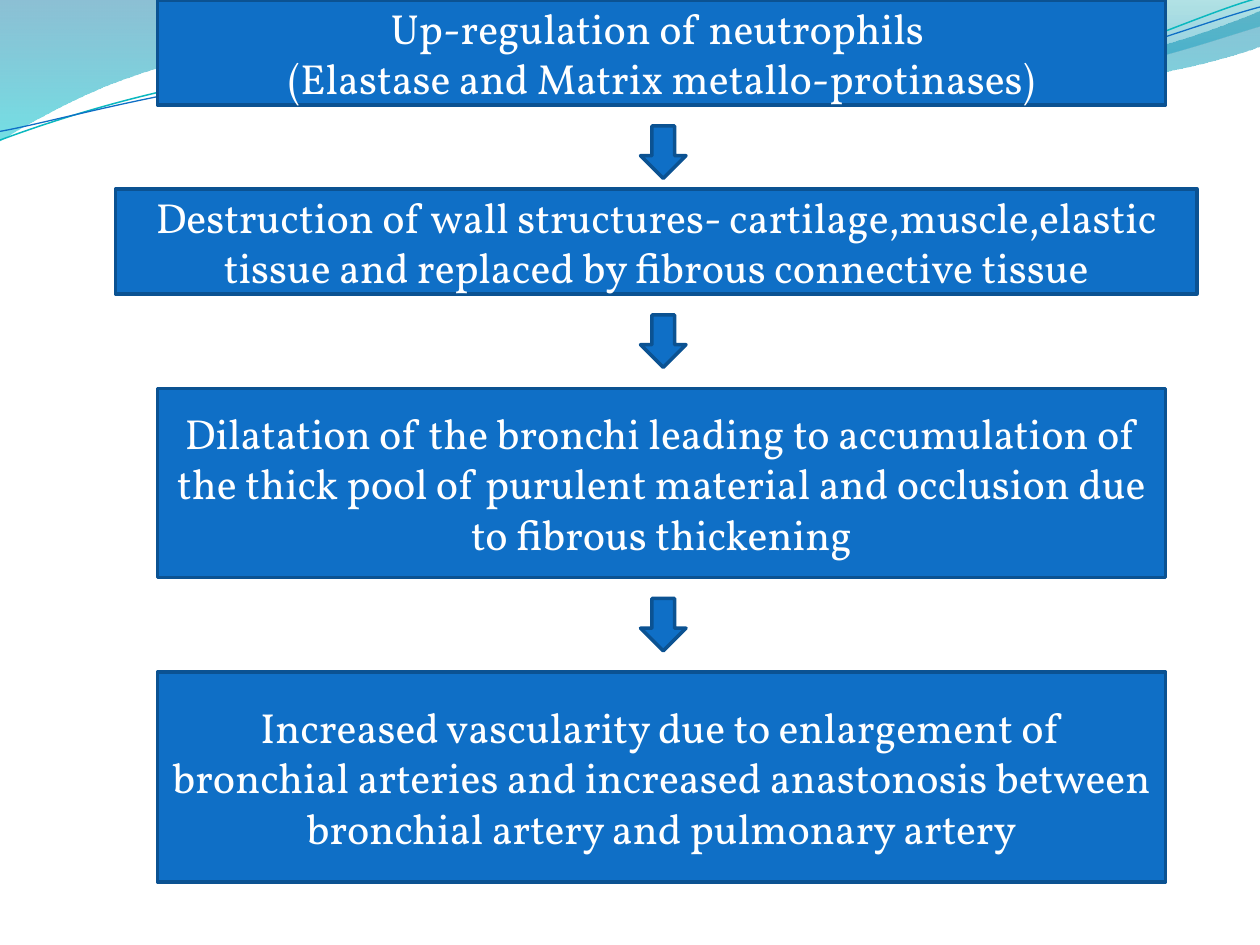
from lxml.etree import SubElement
from pptx import Presentation
from pptx.dml.color import RGBColor
from pptx.enum.shapes import MSO_SHAPE
from pptx.enum.text import MSO_ANCHOR, PP_ALIGN
from pptx.oxml.ns import qn
from pptx.util import Pt

BLUE = RGBColor(0x0F, 0x6F, 0xC6)
DARK_BLUE = RGBColor(0x0B, 0x52, 0x92)
WHITE = RGBColor(0xFF, 0xFF, 0xFF)
OCEAN = RGBColor(0x00, 0x74, 0xA1)
AQUA = RGBColor(0x00, 0xC6, 0xCF)
TEAL = RGBColor(0x00, 0xA1, 0xA9)
SKY = RGBColor(0x00, 0x8B, 0xBF)
TURQUOISE = RGBColor(0x0A, 0xB8, 0xBF)

FONT = "Vollkorn"
STRAND_ROTATION = 357.3
ARROW_LEFT, ARROW_WIDTH, ARROW_HEIGHT, ARROW_GAP = 366, 26, 30, 12

# Each part after the start lists one point for a line, three for a Bezier curve.
WIDE_WAVE = [
    [(0, 0)],
    [(317, -1)],
    [(343, 12), (478, 45), (546, 45)],
    [(614, 45), (690, 19), (720, 6)],
    [(721, 26)],
    [(708, 32), (626, 55), (537, 54)],
    [(448, 54), (275, 20), (185, 24)],
    [(93, 26), (33, 60), (-1, 81)],
    [(0, 0)],
]
RIGHT_WAVE = [
    [(345, -1)],
    [(367, 8), (491, 45), (554, 47)],
    [(620, 50), (692, 23), (720, 15)],
    [(720, 0)],
    [(345, -1)],
]
UPPER_STRAND = [
    [(-1.4, 63.1)],
    [(34.2, 51.7), (114.3, 29.4), (199.4, 29.4)],
    [(284.4, 30.5), (425.8, 67.2), (512, 65.2)],
    [(599.2, 62.3), (676, 25.9), (720.6, 15.9)],
]
LOWER_STRAND = [
    [(-1.1, 58.1)],
    [(33.2, 53.7), (118.2, 32.6), (204.3, 32.7)],
    [(290.3, 33.7), (429.1, 63.3), (515.3, 61.4)],
    [(601.5, 59.4), (679, 30), (721.4, 21)],
]

# Left, top, width, height and paragraphs of each step
STEPS = [
    (90, 0, 576, 60, ["Up-regulation of neutrophils ",
                      "(Elastase and Matrix metallo-protinases)"]),
    (66, 108, 618, 60, ["Destruction of wall structures- cartilage,muscle,elastic "
                        "tissue and replaced by fibrous connective tissue"]),
    (90, 222, 576, 108, ["Dilatation of the bronchi leading to accumulation of the "
                         "thick pool of purulent material and occlusion due to "
                         "fibrous thickening"]),
    (90, 384, 576, 120, ["Increased vascularity due to enlargement of bronchial "
                         "arteries and increased anastonosis between bronchial "
                         "artery and pulmonary artery"]),
]


def add_outline(shapes, outline, close):
    """Build a freeform, then join the points of each curve in one segment."""
    start, *rest = [(Pt(x), Pt(y)) for part in outline for x, y in part]
    builder = shapes.build_freeform(*start)
    builder.add_line_segments(rest, close=close)
    sp = builder.convert_to_shape()
    sp.shadow.inherit = False
    segments = iter(list(sp._element.iter(qn("a:lnTo"))))
    for part in outline[1:]:
        first, *others = [next(segments) for _ in part]
        if others:
            first.tag = qn("a:cubicBezTo")
        for segment in others:
            first.append(segment[0])
            segment.getparent().remove(segment)
    return sp


def add_wave(shapes, outline, stops):
    """Fill an outline from top to bottom; a stop is position, colour, opacity %."""
    sp = add_outline(shapes, outline, True)
    sp.line.fill.background()
    sp.fill.gradient()
    sp.fill.gradient_angle = 270
    for stop, (position, color, _) in zip(sp.fill.gradient_stops, stops):
        stop.position = position
        stop.color.rgb = color
    colors = sp._element.spPr.iter(qn("a:srgbClr"))
    for element, (_, _, opacity) in zip(colors, stops):
        SubElement(element, qn("a:alpha"), val=str(opacity * 1000))


def add_strand(shapes, outline, color, width):
    sp = add_outline(shapes, outline, False)
    sp.rotation = STRAND_ROTATION
    sp.fill.background()
    sp.line.color.rgb = color
    sp.line.width = Pt(width)


def add_block(s, kind, left, top, width, height):
    sp = s.shapes.add_shape(kind, Pt(left), Pt(top), Pt(width), Pt(height))
    sp.shadow.inherit = False
    sp.fill.solid()
    sp.fill.fore_color.rgb = BLUE
    sp.line.color.rgb = DARK_BLUE
    sp.line.width = Pt(2)
    return sp


def add_step(s, left, top, width, height, paragraphs):
    sp = add_block(s, MSO_SHAPE.RECTANGLE, left, top, width, height)
    tf = sp.text_frame
    tf.word_wrap = True
    tf.vertical_anchor = MSO_ANCHOR.MIDDLE
    for i, text in enumerate(paragraphs):
        p = tf.add_paragraph() if i else tf.paragraphs[0]
        p.alignment = PP_ALIGN.CENTER
        r = p.add_run()
        r.text = text
        r.font.name = FONT
        r.font.size = Pt(24)
        r.font.color.rgb = WHITE


def main():
    prs = Presentation()
    prs.slide_width, prs.slide_height = Pt(720), Pt(540)
    s = prs.slides.add_slide(prs.slide_layouts[6])

    add_wave(s.shapes, WIDE_WAVE, [(0, OCEAN, 45), (1, AQUA, 55)])
    add_wave(s.shapes, RIGHT_WAVE, [(0, TEAL, 30), (0.8, SKY, 45)])
    strands = s.shapes.add_group_shape()
    add_strand(strands.shapes, UPPER_STRAND, TURQUOISE, 0.85)
    add_strand(strands.shapes, LOWER_STRAND, BLUE, 0.75)

    for step in STEPS:
        add_step(s, *step)
    for _, top, _, height, _ in STEPS[:-1]:
        add_block(s, MSO_SHAPE.DOWN_ARROW, ARROW_LEFT, top + height + ARROW_GAP,
                  ARROW_WIDTH, ARROW_HEIGHT)

    prs.save("out.pptx")


if __name__ == "__main__":
    main()
